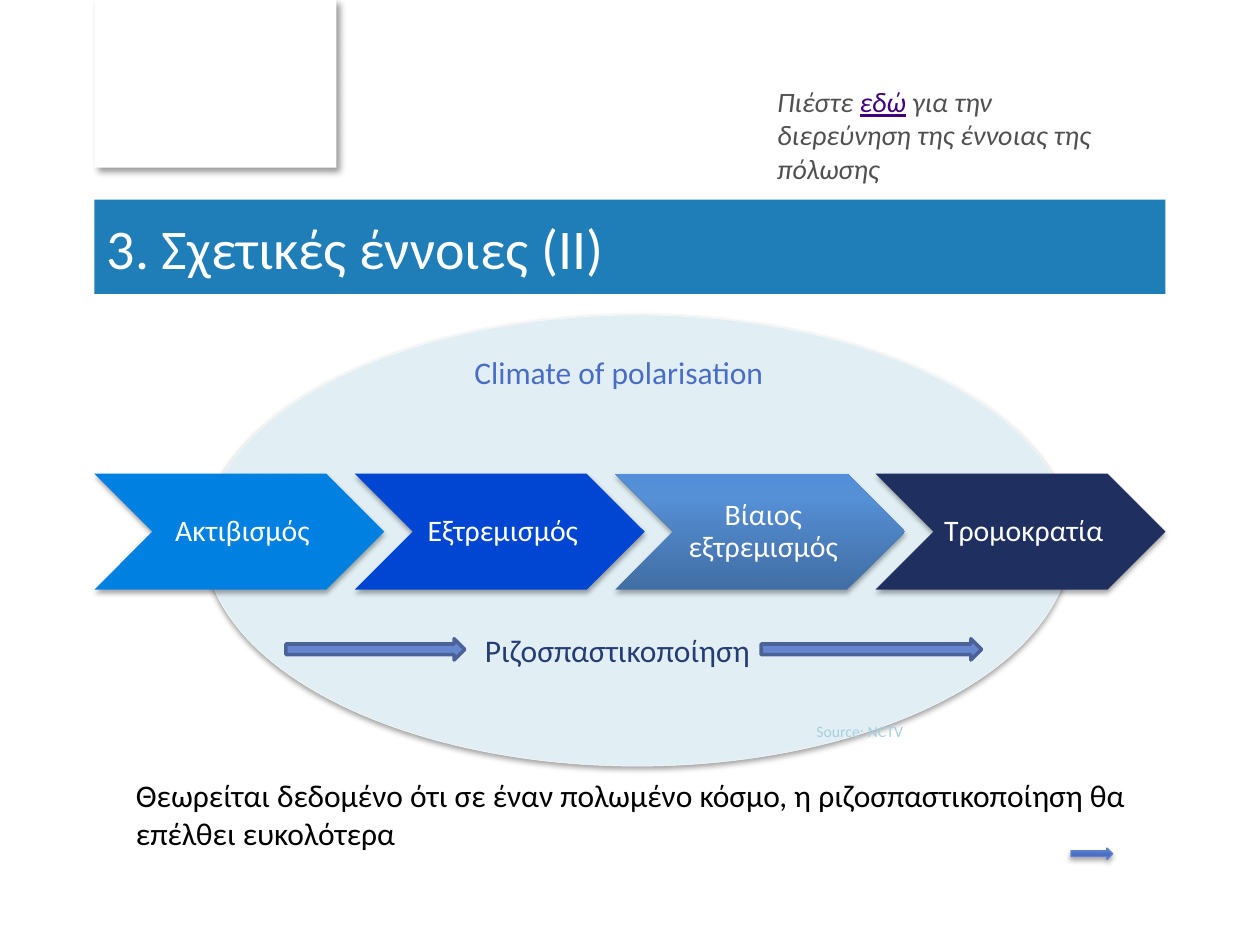
from lxml import etree
from pptx import Presentation
from pptx.dml.color import RGBColor
from pptx.enum.shapes import MSO_SHAPE
from pptx.enum.text import MSO_ANCHOR, MSO_AUTO_SIZE, PP_ALIGN
from pptx.oxml.ns import qn
from pptx.util import Pt

RECTANGLE, ELLIPSE = MSO_SHAPE.RECTANGLE, MSO_SHAPE.OVAL
CHEVRON, ARROW = MSO_SHAPE.CHEVRON, MSO_SHAPE.RIGHT_ARROW
MIDDLE, TOP = MSO_ANCHOR.MIDDLE, MSO_ANCHOR.TOP
LEFT, CENTER = PP_ALIGN.LEFT, PP_ALIGN.CENTER
GROW = MSO_AUTO_SIZE.SHAPE_TO_FIT_TEXT

COLORS = {
    "white": "FFFFFF", "black": "000000", "grey": "505050", "link": "410082",
    "banner": "0770B1", "climate": "E1EFF4", "climate text": "496DC7",
    "radicalisation": "253D75", "source": "A6D0DF",
    "arrow": "6585CF", "arrow line": "4B6299", "small arrow line": "6081CD",
    "activism": "0081E2", "extremism": "0046D2", "terrorism": "1E2F60",
}
VIOLENT_GRADIENT = [(0, "416EA4"), (80, "558FD5"), (100, "538FD9")]
ARROW_GRADIENT = [(0, "405FA6"), (80, "527BD8"), (100, "507ADC")]
SOFT_SHADOW = (35, 3.1, 1.8, 90)


def format_text(frame, runs, size=18, color="black", italic=False, align=LEFT,
                anchor=TOP, spacing=None, margins=(7.2, 3.6, 7.2, 3.6)):
    """Fill a text frame with one paragraph of (text, overrides) runs."""
    frame.word_wrap = True
    frame.vertical_anchor = anchor
    (frame.margin_left, frame.margin_top,
     frame.margin_right, frame.margin_bottom) = map(Pt, margins)
    paragraph = frame.paragraphs[0]
    paragraph.alignment = align
    if spacing:
        paragraph.line_spacing = spacing
    for text, override in runs:
        run = paragraph.add_run()
        run.text = text
        run.font.name = "Calibri"
        run.font.size = Pt(size)
        run.font.italic = italic
        run.font.underline = override.get("underline", False)
        run.font.color.rgb = RGBColor.from_string(COLORS[override.get("color", color)])


class SlideBuilder:
    """Holds the current slide and draws its styled elements."""

    def __init__(self, slide):
        self.slide = slide

    def add_color(self, parent, hex_color, alpha=None):
        color = etree.SubElement(parent, qn("a:srgbClr"), val=hex_color)
        if alpha is not None:
            etree.SubElement(color, qn("a:alpha"), val=str(alpha * 1000))

    def fill_gradient(self, shape, stops):
        shape.fill.gradient()
        shape.fill.gradient_angle = 90
        stop_list = shape._element.spPr.find(".//" + qn("a:gsLst"))
        for stop in list(stop_list):
            stop_list.remove(stop)
        for position, hex_color in stops:
            stop = etree.SubElement(stop_list, qn("a:gs"), pos=str(position * 1000))
            self.add_color(stop, hex_color)

    def add_shadow(self, shape, alpha, blur, distance, angle):
        effects = shape._element.spPr.find(qn("a:effectLst"))
        shadow = etree.SubElement(
            effects, qn("a:outerShdw"), blurRad=str(Pt(blur)), dist=str(Pt(distance)),
            dir=str(angle * 60000), algn="ctr", rotWithShape="0")
        self.add_color(shadow, COLORS["black"], alpha)

    def shape(self, kind, box, fill=None, gradient=None, alpha=None, line=None,
              line_width=1, shadow=None):
        shape = self.slide.shapes.add_shape(kind, *map(Pt, box))
        shape.shadow.inherit = False
        if gradient:
            self.fill_gradient(shape, gradient)
        else:
            shape.fill.solid()
            shape.fill.fore_color.rgb = RGBColor.from_string(COLORS[fill])
        if alpha:
            color = shape._element.spPr.find(qn("a:solidFill"))[0]
            etree.SubElement(color, qn("a:alpha"), val=str(alpha * 1000))
        if line:
            shape.line.color.rgb = RGBColor.from_string(COLORS[line])
            shape.line.width = Pt(line_width)
        else:
            shape.line.fill.background()
        if shadow:
            self.add_shadow(shape, *shadow)
        return shape

    def text(self, box, runs, **style):
        text_box = self.slide.shapes.add_textbox(*map(Pt, box))
        format_text(text_box.text_frame, runs, **style)
        text_box.text_frame.auto_size = GROW

    def banner(self, box, title):
        shape = self.shape(RECTANGLE, box, fill="banner", alpha=90)
        format_text(shape.text_frame, [(title, {})], size=32, color="white", anchor=MIDDLE)

    def chevrons(self, stages, left, top, width, height, pitch):
        for index, (label, fill) in enumerate(stages):
            shape = self.shape(CHEVRON, (left + index * pitch, top, width, height),
                               shadow=SOFT_SHADOW, **fill)
            format_text(shape.text_frame, [(label, {})], size=17, color="white",
                        align=CENTER, anchor=MIDDLE, spacing=0.9,
                        margins=(5, 1.4, 1.4, 1.4))


def main():
    presentation = Presentation()
    presentation.slide_width, presentation.slide_height = Pt(720), Pt(540)
    builder = SlideBuilder(presentation.slides.add_slide(presentation.slide_layouts[6]))

    builder.shape(RECTANGLE, (54, 0, 138.2, 95.8), fill="white", shadow=(40, 4, 3, 45))
    builder.shape(ELLIPSE, (116.6, 180, 495.4, 257.8), fill="climate", line="white",
                  line_width=0.25, shadow=(38, 3.1, 1.6, 90))
    builder.text((264, 198, 180, 29), [("Climate of polarisation", {})],
                 color="climate text")
    builder.banner((54, 114, 612, 54), "3. Σχετικές έννοιες (II)")

    stages = [
        ("Ακτιβισμός", {"fill": "activism"}),
        ("Εξτρεμισμός", {"fill": "extremism"}),
        ("Βίαιος εξτρεμισμός", {"gradient": VIOLENT_GRADIENT}),
        ("Τρομοκρατία", {"fill": "terrorism"}),
    ]
    builder.chevrons(stages, left=54, top=270.7, width=165.6, height=66.2, pitch=148.8)

    builder.text((459.4, 409, 85.7, 18), [("Source: NCTV", {})], size=9, color="source")
    builder.text((70.6, 440, 588.2, 51),
                 [("Θεωρείται δεδομένο ότι σε έναν πολωμένο κόσμο, "
                   "η ριζοσπαστικοποίηση θα επέλθει ευκολότερα", {})])
    builder.text((270, 357, 168, 29), [("Ριζοσπαστικοποίηση", {})],
                 color="radicalisation")
    for left, width in ((163.4, 102.2), (434.9, 126)):
        builder.shape(ARROW, (left, 365, left and width, 12.2), fill="arrow",
                      line="arrow line", line_width=2)
    builder.text((437, 44.6, 216.7, 65.5),
                 [("Πιέστε ", {}), ("εδώ", {"color": "link", "underline": True}),
                  (" για την διερεύνηση της έννοιας της πόλωσης", {})],
                 size=16, color="grey", italic=True)
    builder.shape(ARROW, (612, 484.6, 23.8, 6.5), gradient=ARROW_GRADIENT,
                  line="small arrow line", line_width=0.75, shadow=SOFT_SHADOW)

    presentation.save("out.pptx")


if __name__ == "__main__":
    main()
